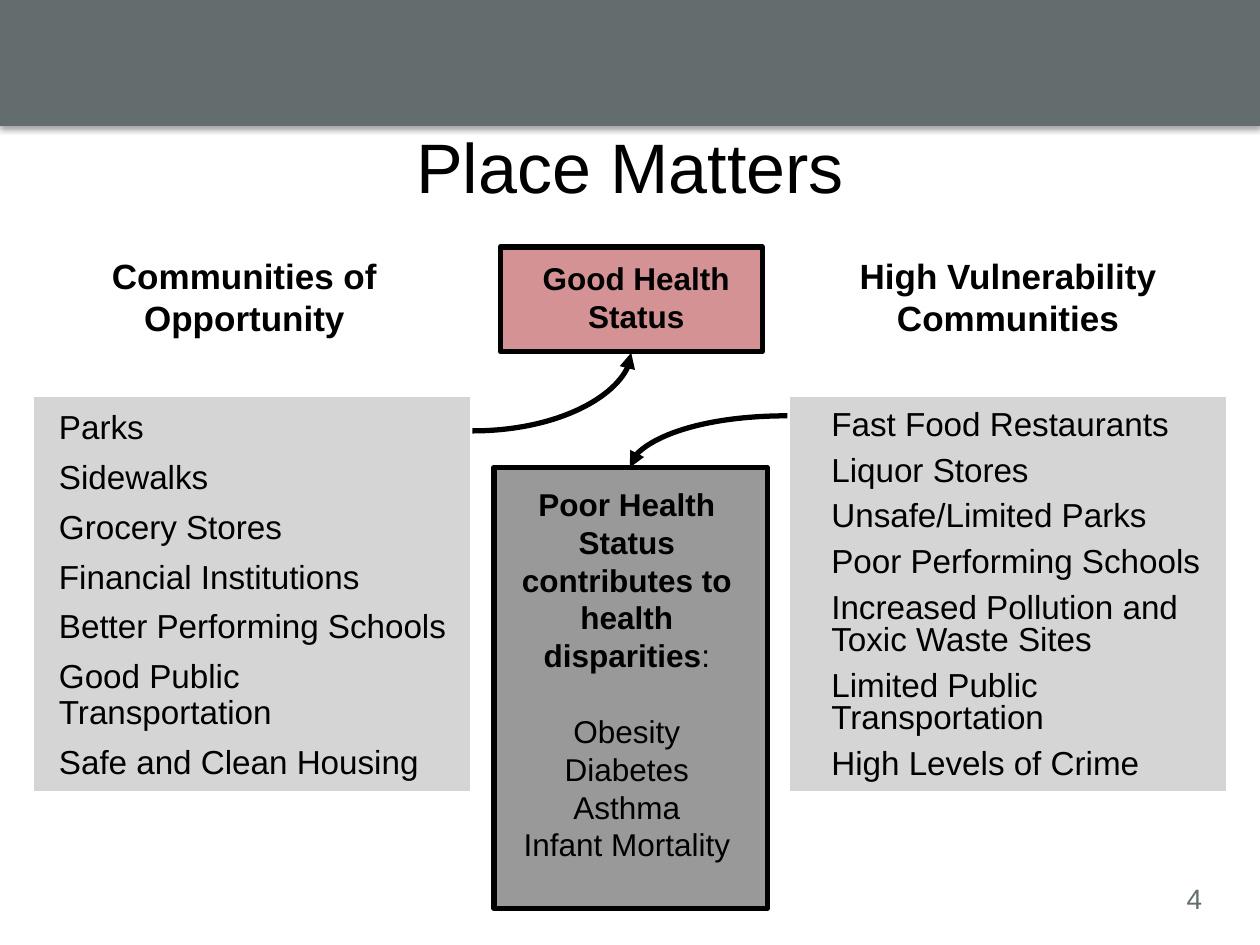
from lxml.etree import SubElement as Sub
from pptx import Presentation
from pptx.dml.color import RGBColor as RGB
from pptx.enum.shapes import MSO_CONNECTOR as Link, MSO_SHAPE as Kind
from pptx.enum.text import PP_ALIGN as Align
from pptx.oxml.ns import qn
from pptx.util import Inches, Pt

BLACK = RGB(0x00, 0x00, 0x00)
WHITE = RGB(0xFF, 0xFF, 0xFF)
SLATE = RGB(0x63, 0x6D, 0x6E)
LIGHT = RGB(0xD5, 0xD5, 0xD5)
GREY = RGB(0x99, 0x99, 0x99)
RED = RGB(0xA6, 0x1C, 0x20)

GOOD = ["Parks", "Sidewalks", "Grocery Stores", "Financial Institutions",
        "Better Performing Schools", "Good Public Transportation",
        "Safe and Clean Housing"]
POOR = ["Fast Food Restaurants", "Liquor Stores", "Unsafe/Limited Parks",
        "Poor Performing Schools", "Increased Pollution and Toxic Waste Sites",
        "Limited Public Transportation", "High Levels of Crime"]
ILLS = ["Obesity", "Diabetes", "Asthma", "Infant Mortality"]

COLS, ROWS = 100, 75


def write(frame, lines, size=18, bold=False, color=BLACK, align=Align.CENTER,
          space=None, gap=0, lead=0, join=False):
    """Add lines to a frame; lead goes before the first, gap before the rest."""
    for i, line in enumerate(lines):
        last = frame.paragraphs[-1]
        para = last if join or not last.runs else frame.add_paragraph()
        if not join:
            para.alignment = align
            para.space_before = Pt(gap if i else lead)
            if space:
                para.line_spacing = space
        for n, part in enumerate(line.split("\n")):
            if n:
                para.add_line_break()
            run = para.add_run()
            run.text = part
            font = run.font
            font.name, font.size, font.bold = "Arial", Pt(size), bold
            font.color.rgb = color


class Page:
    font = "Arial"
    width = 3  # line width in points

    def __init__(self, deck):
        self.shapes = deck.slides.add_slide(deck.slide_layouts[6]).shapes
        self.col = deck.slide_width / COLS
        self.row = deck.slide_height / ROWS

    def place(self, x, y, w, h):
        return (round(x * self.col), round(y * self.row),
                round(w * self.col), round(h * self.row))

    def rect(self, *at, fill, line=None, alpha=None):
        box = self.shapes.add_shape(Kind.RECTANGLE, *self.place(*at))
        box.shadow.inherit = False
        box.fill.solid()
        box.fill.fore_color.rgb = fill
        if alpha:
            tint = box.fill._xPr.find(qn("a:solidFill"))[0]
            Sub(tint, qn("a:alpha"), val=str(alpha * 1000))
        if line is None:
            box.line.fill.background()
        else:
            box.line.color.rgb = line
            box.line.width = Pt(self.width)
        return box

    def shade(self, box, alpha, blur, dist):
        root = box._element.spPr.find(qn("a:effectLst"))
        cast = Sub(root, qn("a:outerShdw"), blurRad=str(Pt(blur)),
                   dist=str(Pt(dist)), dir="5400000", rotWithShape="0")
        tint = Sub(cast, qn("a:srgbClr"), val=str(BLACK))
        Sub(tint, qn("a:alpha"), val=str(alpha * 1000))

    def text(self, *at, lines, wrap=True, **form):
        frame = self.shapes.add_textbox(*self.place(*at)).text_frame
        frame.word_wrap = wrap
        write(frame, lines, **form)
        return frame

    def curve(self, *ends):
        link = self.shapes.add_connector(Link.CURVE, *self.place(*ends))
        link.line.color.rgb = BLACK
        link.line.width = Pt(self.width)
        props = link._element.spPr
        props.find(qn("a:prstGeom")).set("prst", "curvedConnector2")
        Sub(props.find(qn("a:ln")), qn("a:tailEnd"), type="triangle")
        Sub(props, qn("a:effectLst"))


def main():
    deck = Presentation()
    deck.slide_width, deck.slide_height = Inches(10), Inches(7.5)
    page = Page(deck)

    # Top band, title and page number
    band = page.rect(0, 0, COLS, 10, fill=SLATE)
    page.shade(band, alpha=35, blur=3.1, dist=1.8)
    page.text(5, 9.3, 90, 6.2, lines=["Place Matters"], size=40)
    page.text(93.2, 69.5, 4.8, 3.7, lines=["4"], wrap=False, size=16,
              color=SLATE, align=Align.LEFT)

    # Panels, mirrored about the middle
    for x in (2.5, 62.5):
        page.rect(x, 31.3, 35, 31.7, fill=LIGHT, line=WHITE)
    page.rect(39.2, 37.1, 21.7, 35, fill=GREY, line=BLACK)
    page.rect(39.7, 19.6, 20.8, 8.3, fill=RED, line=BLACK, alpha=48)

    # Column heads and lists
    for x, w, head in ((1.9, 35, "Communities of Opportunity"),
                       (62.9, 34.2, "High Vulnerability Communities")):
        page.text(x, 19.7, w, 7.7, lines=[head], size=20, bold=True)
    for x, w, lines, space in ((3.7, 33, GOOD, 0.9), (65, 35, POOR, 0.8)):
        page.text(x, 32.1, w, 31.7, lines=lines, size=19, align=Align.LEFT,
                  space=space, gap=8)

    # Health outcomes
    page.text(40.5, 20.1, 20, 7, lines=["Good Health Status"], bold=True)
    ills = page.text(
        38.3, 38, 22.9, 31.3, bold=True,
        lines=["Poor Health Status\ncontributes to health disparities"])
    write(ills, [":"], join=True)
    write(ills, ILLS, lead=21.7)

    # Arrows from the communities to their outcomes
    page.curve(62.5, 33, 50, 37.1)
    page.curve(37.5, 34.2, 50.1, 28)

    deck.save("out.pptx")


if __name__ == "__main__":
    main()
